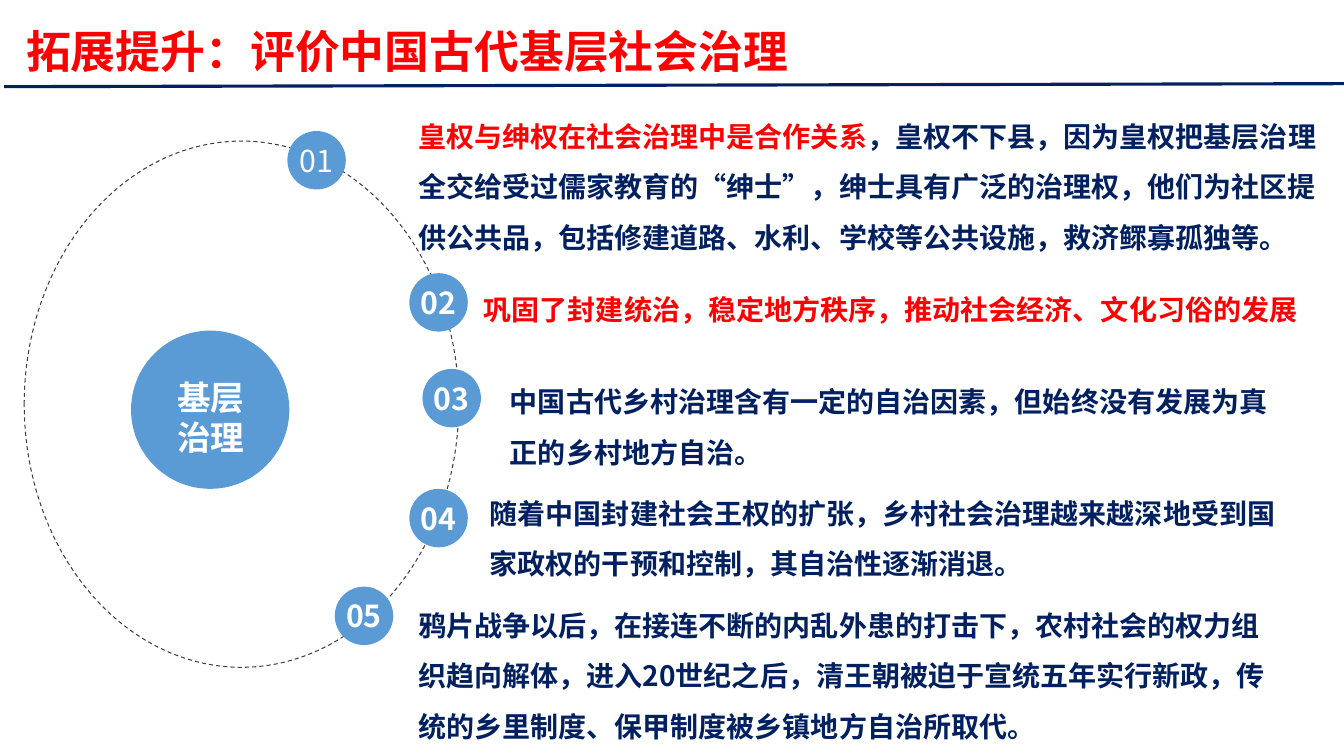
"""Build the slide on grassroots governance in ancient China."""
from lxml import etree
from pptx import Presentation
from pptx import util as u
from pptx.dml.color import RGBColor
from pptx.enum import dml, shapes, text
from pptx.oxml import ns

COLORS = {"red": "FF0000", "navy": "002060", "blue": "5B9BD5", "gray": "404040", "white": "FFFFFF"}
TITLE_FONT, BODY_FONT = "Noto Sans CJK JP", "Noto Sans CJK SC"
TITLE = "拓展提升：评价中国古代基层社会治理"
HUB = "基层治理"
NODE_SIZE = 0.58
NODES = [
    ("01", 2.85, 1.3, False),
    ("02", 4.06, 2.71, True),
    ("03", 4.19, 3.66, True),
    ("04", 4.06, 4.85, True),
    ("05", 3.32, 5.82, True),
]
POINTS = [
    ((4.05, 0.97, 9.22, 1.61), [
        ("皇权与绅权在社会治理中是合作关系", "red"),
        ("，皇权不下县，因为皇权把基层治理全交给受过儒家教育的“绅士”，绅士具有广泛的治理权，"
         "他们为社区提供公共品，包括修建道路、水利、学校等公共设施，救济鳏寡孤独等。", "navy")]),
    ((4.7, 2.69, 8.32, 0.6), [
        ("巩固了封建统治，稳定地方秩序，推动社会经济、文化习俗的发展", "red")]),
    ((4.96, 3.6, 7.8, 1.11), [
        ("中国古代乡村治理含有一定的自治因素，但始终没有发展为真正的乡村地方自治。", "navy")]),
    ((4.76, 4.71, 8.26, 1.11), [
        ("随着中国封建社会王权的扩张，乡村社会治理越来越深地受到国家政权的干预和控制，"
         "其自治性逐渐消退。", "navy")]),
    ((4.05, 5.82, 8.71, 1.61), [
        ("鸦片战争以后，在接连不断的内乱外患的打击下，农村社会的权力组织趋向解体，"
         "进入20世纪之后，清王朝被迫于宣统五年实行新政，"
         "传统的乡里制度、保甲制度被乡镇地方自治所取代。", "navy")]),
]


def inches(values):
    return [u.Inches(value) for value in values]


def color(name):
    return RGBColor.from_string(COLORS[name])


def write(box, spans, size=20, font=BODY_FONT, bold=True, align=text.PP_ALIGN.LEFT,
          spacing=1.0, insets=(0.1, 0.05), wrap=True, grow=True):
    frame = box.text_frame
    frame.word_wrap = wrap
    frame.auto_size = text.MSO_AUTO_SIZE.SHAPE_TO_FIT_TEXT if grow else text.MSO_AUTO_SIZE.NONE
    frame.margin_left = frame.margin_right = u.Inches(insets[0])
    frame.margin_top = frame.margin_bottom = u.Inches(insets[1])
    para = frame.paragraphs[0]
    para.alignment = align
    para.line_spacing = spacing
    for words, shade in spans:
        span = para.add_run()
        span.text = words
        span.font.size = u.Pt(size)
        span.font.bold = bold
        span.font.color.rgb = color(shade)
        span.font.name = font
        east = etree.SubElement(span.font._element, ns.qn("a:ea"))
        east.set("typeface", font)


def add_text(page, place, spans, **style):
    write(page.shapes.add_textbox(*inches(place)), spans, **style)


def add_circle(page, place, fill=None):
    circle = page.shapes.add_shape(shapes.MSO_SHAPE.OVAL, *inches(place))
    circle.shadow.inherit = False
    if fill:
        circle.fill.solid()
        circle.fill.fore_color.rgb = color(fill)
        circle.line.fill.background()
    else:
        circle.fill.background()
    return circle


def main():
    deck = Presentation()
    deck.slide_width, deck.slide_height = inches((13.33, 7.5))
    page = deck.slides.add_slide(deck.slide_layouts[6])

    add_text(page, (0.13, 0.17, 7.93, 0.67), [(TITLE, "red")], size=32, font=TITLE_FONT,
             insets=(0.13, 0.07), wrap=False)

    orbit = add_circle(page, (0.24, 1.4, 4.31, 5.22))
    orbit.line.color.rgb = color("gray")
    orbit.line.width = u.Pt(0)
    orbit.line.dash_style = dml.MSO_LINE.DASH

    for number, left, top, bold in NODES:
        node = add_circle(page, (left, top, NODE_SIZE, NODE_SIZE), "blue")
        write(node, [(number, "white")], size=21.6, bold=bold, align=text.PP_ALIGN.CENTER,
              insets=(0, 0), grow=False)

    add_circle(page, (1.3, 3.28, 1.57, 1.57), "blue")
    add_text(page, (1.63, 3.7, 0.92, 0.9), [(HUB, "white")], size=24,
             align=text.PP_ALIGN.CENTER, insets=(0.09, 0.04))

    for place, spans in POINTS:
        add_text(page, place, spans, spacing=1.5)

    rule = page.shapes.add_connector(shapes.MSO_CONNECTOR.STRAIGHT,
                                     *inches((0.04, 0.86, 13.34, 0.83)))
    rule.line.color.rgb = color("navy")
    rule.line.width = u.Pt(2.25)
    etree.SubElement(rule._element.spPr, ns.qn("a:effectLst"))

    deck.save("out.pptx")


if __name__ == "__main__":
    main()
